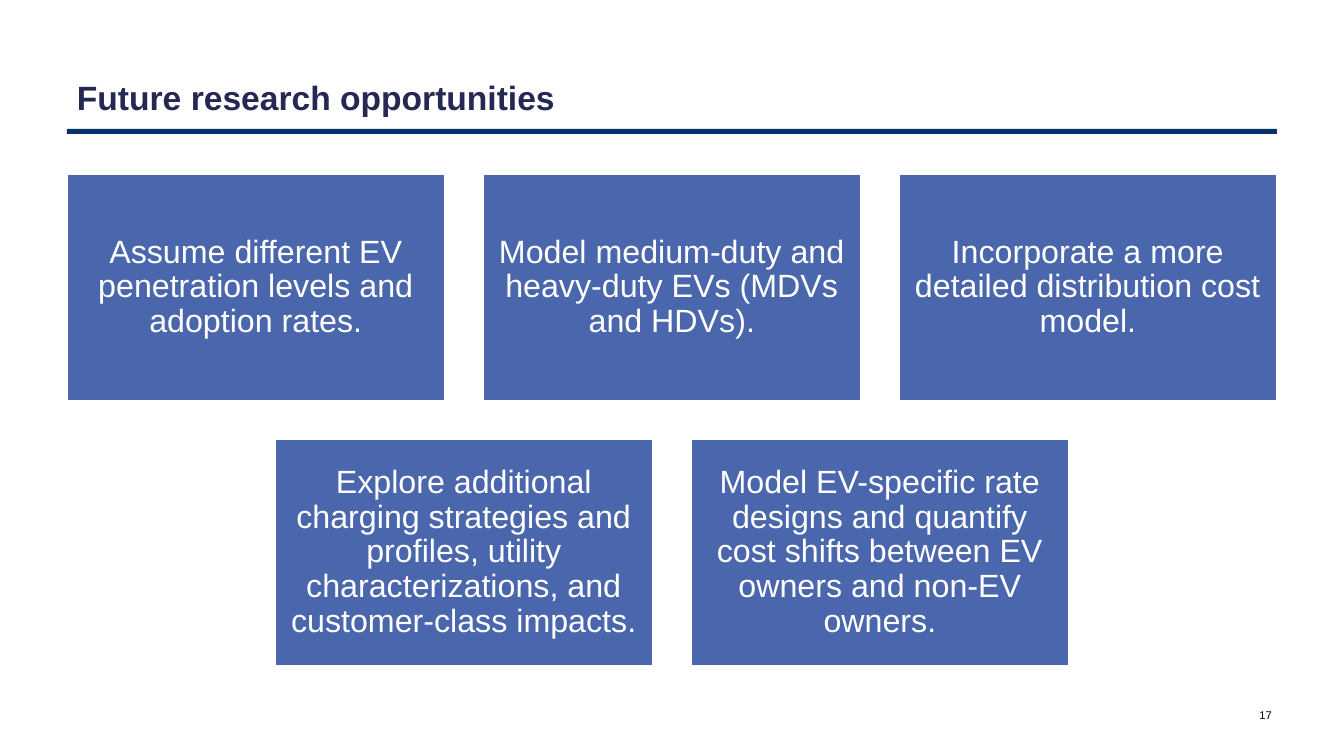
import pptx
import pptx.dml.color
import pptx.enum.shapes
import pptx.enum.text
import pptx.util

PX = 914400 / 100.8
PAGE_WIDTH, PAGE_HEIGHT = 1344, 756
ALIGN = pptx.enum.text.PP_ALIGN
ANCHOR = pptx.enum.text.MSO_ANCHOR
RECTANGLE = pptx.enum.shapes.MSO_SHAPE.RECTANGLE


def color(value):
    return pptx.dml.color.RGBColor.from_string(value)


def write(shape, text, size, ink, align, anchor, margin):
    """Fill a shape with one wrapped paragraph; margin is top and bottom in px."""
    frame = shape.text_frame
    frame.word_wrap = True
    frame.vertical_anchor = anchor
    frame.margin_left = frame.margin_right = round(10 * PX)
    frame.margin_top = frame.margin_bottom = round(margin * PX)
    para = frame.paragraphs[0]
    para.alignment = align
    span = para.add_run()
    span.text = text
    span.font.name = "Arial"
    span.font.size = pptx.util.Pt(size)
    span.font.color.rgb = color(ink)
    return para


deck = pptx.Presentation()
deck.slide_width = round(PAGE_WIDTH * PX)
deck.slide_height = round(PAGE_HEIGHT * PX)
page = deck.slides.add_slide(deck.slide_layouts[6])

# Heading and rule
rule = page.shapes.add_shape(RECTANGLE, *(round(n * PX) for n in (67, 129, 1210, 5)))
rule.shadow.inherit = False
rule.fill.solid()
rule.fill.fore_color.rgb = color("08306A")
rule.line.fill.background()

title = page.shapes.add_textbox(*(round(n * PX) for n in (67, 72, 1210, 50)))
heading = write(title, "Future research opportunities", 24, "242852",
                ALIGN.LEFT, ANCHOR.BOTTOM, 5)
heading.runs[0].font.bold = True

number = page.shapes.add_textbox(*(round(n * PX) for n in (1232, 695, 50, 40)))
write(number, "17", 8, "000000", ALIGN.RIGHT, ANCHOR.MIDDLE, 5)

# Rows of topics, each centred on the page
BOX_WIDTH, BOX_HEIGHT, GAP, FIRST_TOP = 378, 227, 38, 174
topic_rows = [
    ["Assume different EV penetration levels and adoption rates.",
     "Model medium-duty and heavy-duty EVs (MDVs and HDVs).",
     "Incorporate a more detailed distribution cost model."],
    ["Explore additional charging strategies and profiles, utility "
     "characterizations, and customer-class impacts.",
     "Model EV-specific rate designs and quantify cost shifts between "
     "EV owners and non-EV owners."],
]
for row, topics in enumerate(topic_rows):
    row_width = len(topics) * (BOX_WIDTH + GAP) - GAP
    row_left = (PAGE_WIDTH - row_width) // 2
    top = FIRST_TOP + row * (BOX_HEIGHT + GAP)
    for column, topic in enumerate(topics):
        left = row_left + column * (BOX_WIDTH + GAP)
        box = page.shapes.add_shape(
            RECTANGLE, round(left * PX), round(top * PX),
            round(BOX_WIDTH * PX), round(BOX_HEIGHT * PX))
        box.shadow.inherit = False
        box.fill.solid()
        box.fill.fore_color.rgb = color("4A66AC")
        box.line.color.rgb = color("FFFFFF")
        box.line.width = pptx.util.Pt(2)
        para = write(box, topic, 23, "FFFFFF", ALIGN.CENTER, ANCHOR.MIDDLE, 10)
        para.line_spacing = 0.9

deck.save("out.pptx")
